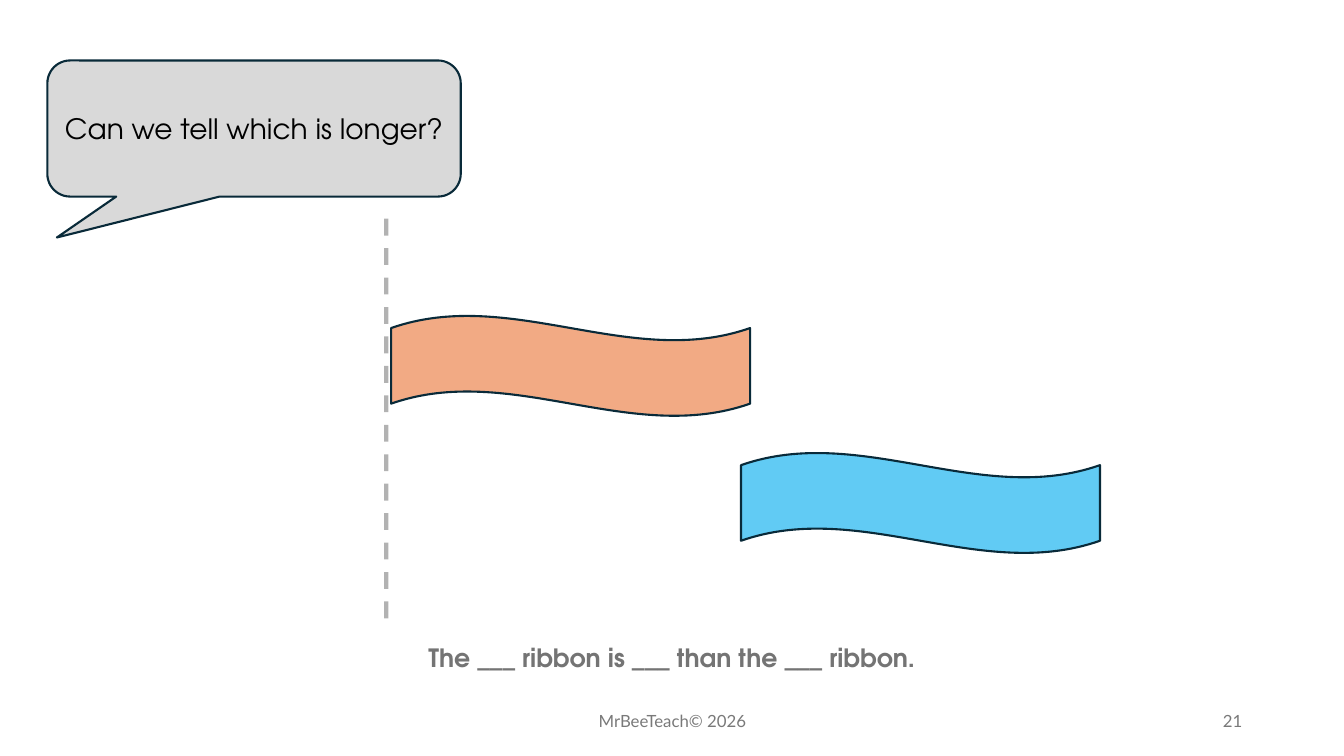
from dataclasses import dataclass

from lxml import etree
from pptx import Presentation
from pptx.dml.color import RGBColor
from pptx.enum.dml import MSO_LINE_DASH_STYLE as Dash
from pptx.enum.shapes import MSO_CONNECTOR as Connector, MSO_SHAPE as Shape
from pptx.enum.text import MSO_ANCHOR as Anchor, MSO_AUTO_SIZE as AutoSize, PP_ALIGN as Align
from pptx.oxml.ns import qn
from pptx.util import Inches, Pt


@dataclass(frozen=True)
class Theme:
    ink: str = "000000"
    outline: str = "092A39"
    bubble: str = "D9D9D9"
    orange: str = "F2AA84"
    blue: str = "61CBF4"
    sentence: str = "747474"
    footer: str = "797979"
    body_font: str = "TeX Gyre Adventor"
    footer_font: str = "Lato"
    question_size: int = 20
    sentence_size: int = 18
    footer_size: int = 12
    outline_width: float = 1.5
    guide_width: float = 3
    guide_opacity: int = 30


THEME = Theme()
QUESTION_FORMAT = {"name": THEME.body_font, "size": Pt(THEME.question_size)}
SENTENCE_FORMAT = {"name": THEME.body_font, "size": Pt(THEME.sentence_size), "bold": True}
FOOTER_FORMAT = {"name": THEME.footer_font, "size": Pt(THEME.footer_size)}


def inches(*lengths):
    return [Inches(length) for length in lengths]


def write(frame, text, font_format, color, align=Align.CENTER, anchor=Anchor.MIDDLE):
    frame.word_wrap = True
    frame.vertical_anchor = anchor
    para = frame.paragraphs[0]
    para.alignment = align
    span = para.add_run()
    span.text = text
    for name, value in font_format.items():
        setattr(span.font, name, value)
    span.font.color.rgb = RGBColor.from_string(color)


def add_outlined_shape(page, preset, box, fill):
    shape = page.shapes.add_shape(preset, *inches(*box))
    shape.shadow.inherit = False
    shape.fill.solid()
    shape.fill.fore_color.rgb = RGBColor.from_string(fill)
    shape.line.color.rgb = RGBColor.from_string(THEME.outline)
    shape.line.width = Pt(THEME.outline_width)
    return shape


# Speech bubble with the question
def add_question(page, box):
    bubble = add_outlined_shape(page, Shape.ROUNDED_RECTANGULAR_CALLOUT, box, THEME.bubble)
    for index, value in enumerate((-0.477, 0.801, 0.167)):
        bubble.adjustments[index] = value
    write(bubble.text_frame, "Can we tell which is longer?", QUESTION_FORMAT, THEME.ink)


# Two equal ribbons and the dashed starting line
def add_ribbons(page, box):
    left, top, width, height = box
    ribbon_width, ribbon_height = 3.56, 1
    guide_gap, ribbon_top = 0.05, 0.96

    add_outlined_shape(
        page, Shape.WAVE,
        (left + width - ribbon_width, top + 2.32, ribbon_width, ribbon_height), THEME.blue)

    guide = page.shapes.add_connector(
        Connector.STRAIGHT, *inches(left, top, left, top + height))
    guide.line.color.rgb = RGBColor.from_string(THEME.ink)
    guide.line.width = Pt(THEME.guide_width)
    guide.line.dash_style = Dash.DASH
    properties = guide.line.fill._xPr.find(qn("a:solidFill"))
    alpha = etree.SubElement(properties[0], qn("a:alpha"))
    alpha.set("val", str(THEME.guide_opacity * 1000))
    etree.SubElement(guide._element.spPr, qn("a:effectLst"))

    add_outlined_shape(
        page, Shape.WAVE,
        (left + guide_gap, top + ribbon_top, ribbon_width, ribbon_height), THEME.orange)


# Sentence to complete
def add_sentence(page, box):
    frame = page.shapes.add_textbox(*inches(*box)).text_frame
    frame.auto_size = AutoSize.SHAPE_TO_FIT_TEXT
    write(frame, "The ___ ribbon is ___ than the ___ ribbon.",
          SENTENCE_FORMAT, THEME.sentence, anchor=Anchor.TOP)


# Copyright line and page number
def add_footer(page, box):
    left, top, width, height = box
    number_width = 3
    parts = (
        ("MrBeeTeach© 2026", left, 4.5, Align.CENTER),
        ("21", left + width - number_width, number_width, Align.RIGHT),
    )
    for text, part_left, part_width, align in parts:
        part = page.shapes.add_textbox(*inches(part_left, top, part_width, height))
        write(part.text_frame, text, FOOTER_FORMAT, THEME.footer, align)


def main():
    deck = Presentation()
    deck.slide_width, deck.slide_height = inches(13.33, 7.5)
    page = deck.slides.add_slide(deck.slide_layouts[6])
    add_footer(page, (4.42, 6.95, 8, 0.4))
    add_sentence(page, (3.33, 6.32, 6.67, 0.4))
    add_question(page, (0.47, 0.6, 4.1, 1.35))
    add_ribbons(page, (3.83, 2.17, 7.08, 3.99))
    deck.save("out.pptx")


if __name__ == "__main__":
    main()
